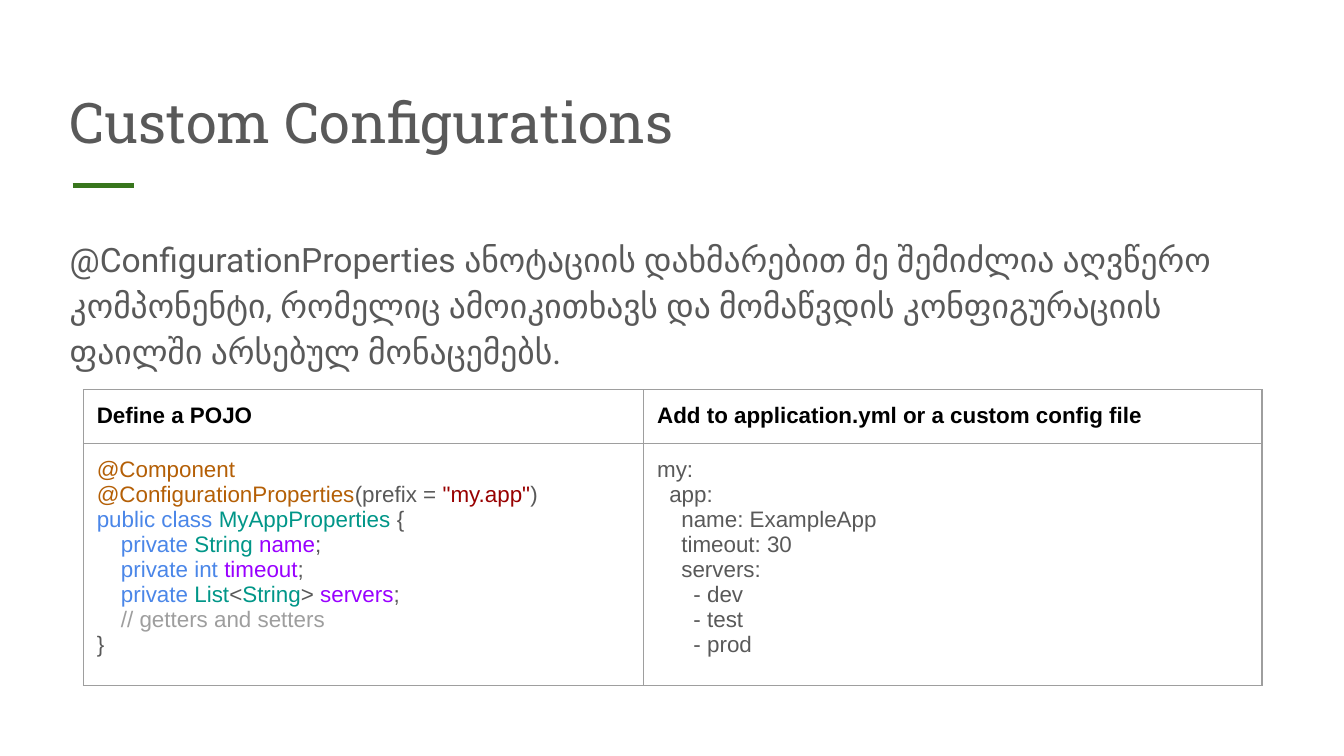
import pptx
import pptx.dml.color
import pptx.enum.shapes
import pptx.enum.text
import pptx.oxml
import pptx.oxml.ns
import pptx.util
from dataclasses import dataclass
from lxml import etree

Inches = pptx.util.Inches
Pt = pptx.util.Pt
qn = pptx.oxml.ns.qn


@dataclass(frozen=True)
class Theme:
    # Colours
    text: str = "595959"
    heading: str = "000000"
    accent: str = "38761D"
    border: str = "9E9E9E"
    annotation: str = "B45F06"
    string: str = "980000"
    keyword: str = "4A86E8"
    type_name: str = "009688"
    field: str = "9900FF"
    comment: str = "9E9E9E"
    # Fonts and sizes
    title_font: str = "Roboto Slab"
    body_font: str = "Roboto"
    code_font: str = "Arial"
    title_size: int = 30
    body_size: int = 18
    code_size: int = 12


T = Theme()
INSET = Inches(0.1)
INDENT = 0.09  # inches for each level of code indentation

# Each code line: indent level, then (text, colour) runs
JAVA_LINES = [
    (0, [("@Component", T.annotation)]),
    (0, [("@ConfigurationProperties", T.annotation), ("(prefix = ", T.text),
         ('"my.app"', T.string), (")", T.text)]),
    (0, [("public class ", T.keyword), ("MyAppProperties ", T.type_name),
         ("{", T.text)]),
    (2, [("private ", T.keyword), ("String ", T.type_name),
         ("name", T.field), (";", T.text)]),
    (2, [("private int ", T.keyword), ("timeout", T.field), (";", T.text)]),
    (2, [("private ", T.keyword), ("List", T.type_name), ("<", T.text),
         ("String", T.type_name), ("> ", T.text), ("servers", T.field),
         (";", T.text)]),
    (2, [("// getters and setters", T.comment)]),
    (0, [("}", T.text)]),
]
YAML_LINES = [(level, [(text, T.text)]) for level, text in [
    (0, "my:"), (1, "app:"), (2, "name: ExampleApp"), (2, "timeout: 30"),
    (2, "servers:"), (3, "- dev"), (3, "- test"), (3, "- prod")]]
HEADINGS = ["Define a POJO", "Add to application.yml or a custom config file"]


def rgb(color):
    return pptx.dml.color.RGBColor.from_string(color)


def add_run(p, text, font, size, color, bold=False):
    r = p.add_run()
    r.text = text
    r.font.name = font
    r.font.size = Pt(size)
    r.font.bold = bold
    r.font.color.rgb = rgb(color)


def add_text(s, box, text, font, size, anchor):
    sp = s.shapes.add_textbox(*(Inches(v) for v in box))
    tf = sp.text_frame
    tf.word_wrap = True
    tf.vertical_anchor = anchor
    tf.margin_left = tf.margin_right = tf.margin_top = tf.margin_bottom = INSET
    p = tf.paragraphs[0]
    add_run(p, text, font, size, T.text)
    return p


def add_rule(s, x1, x2, y):
    line = s.shapes.add_connector(pptx.enum.shapes.MSO_CONNECTOR.STRAIGHT,
                                  Inches(x1), Inches(y), Inches(x2), Inches(y))
    line.line.color.rgb = rgb(T.accent)
    line.line.width = Pt(3)
    etree.SubElement(line._element.spPr, qn("a:effectLst"))


def style_cell(cell):
    cell.margin_left = cell.margin_right = INSET
    cell.margin_top = cell.margin_bottom = INSET
    cell.fill.background()
    # Borders come before the fill in the cell properties
    tc_pr = cell._tc.get_or_add_tcPr()
    for i, side in enumerate(("lnL", "lnR", "lnT", "lnB")):
        ln = etree.Element(qn(f"a:{side}"), w=str(Pt(0.75)))
        fill = etree.SubElement(ln, qn("a:solidFill"))
        etree.SubElement(fill, qn("a:srgbClr"), val=T.border)
        tc_pr.insert(i, ln)


def fill_cell(cell, lines, bold=False):
    style_cell(cell)
    tf = cell.text_frame
    for i, (level, runs) in enumerate(lines):
        p = tf.paragraphs[0] if i == 0 else tf.add_paragraph()
        if level:
            p._p.get_or_add_pPr().set("marL", str(Inches(level * INDENT)))
        for text, color in runs:
            add_run(p, text, T.code_font, T.code_size, color, bold)
        # The paragraph end keeps the code size, so rows do not grow
        etree.SubElement(p._p, qn("a:endParaRPr"), sz=str(T.code_size * 100))


def add_code_table(s, left, top, widths, heights):
    table = s.shapes.add_table(
        len(heights), len(widths), Inches(left), Inches(top),
        Inches(sum(widths)), Inches(sum(heights))).table
    table.first_row = table.horz_banding = False
    for column, width in zip(table.columns, widths):
        column.width = Inches(width)
    for row, height in zip(table.rows, heights):
        row.height = Inches(height)
    for i, (heading, code) in enumerate(zip(HEADINGS, (JAVA_LINES, YAML_LINES))):
        fill_cell(table.cell(0, i), [(0, [(heading, T.heading)])], bold=True)
        fill_cell(table.cell(1, i), code)


def main():
    prs = pptx.Presentation()
    # Widescreen, 16:9
    prs.slide_width = Inches(10)
    prs.slide_height = prs.slide_width * 9 // 16
    s = prs.slides.add_slide(prs.slide_layouts[6])
    anchors = pptx.enum.text.MSO_ANCHOR

    # Title and accent rule
    add_rule(s, 0.54, 1, 1.38)
    add_text(s, (0.42, 0.5, 9.15, 0.75), "Custom Configurations",
             T.title_font, T.title_size, anchors.BOTTOM)

    # Introduction
    p = add_text(s, (0.42, 1.63, 9.15, 3.37),
                 "@ConfigurationProperties ანოტაციის დახმარებით მე შემიძლია აღვწერო "
                 "კომპონენტი, რომელიც ამოიკითხავს და მომაწვდის კონფიგურაციის "
                 "ფაილში არსებულ მონაცემებს.",
                 T.body_font, T.body_size, anchors.TOP)
    p.line_spacing = 1.15
    p.space_after = Pt(12)

    # Code examples
    add_code_table(s, 0.62, 2.9, widths=(4.17, 4.6), heights=(0.38, 1.73))

    prs.save("out.pptx")


if __name__ == "__main__":
    main()
